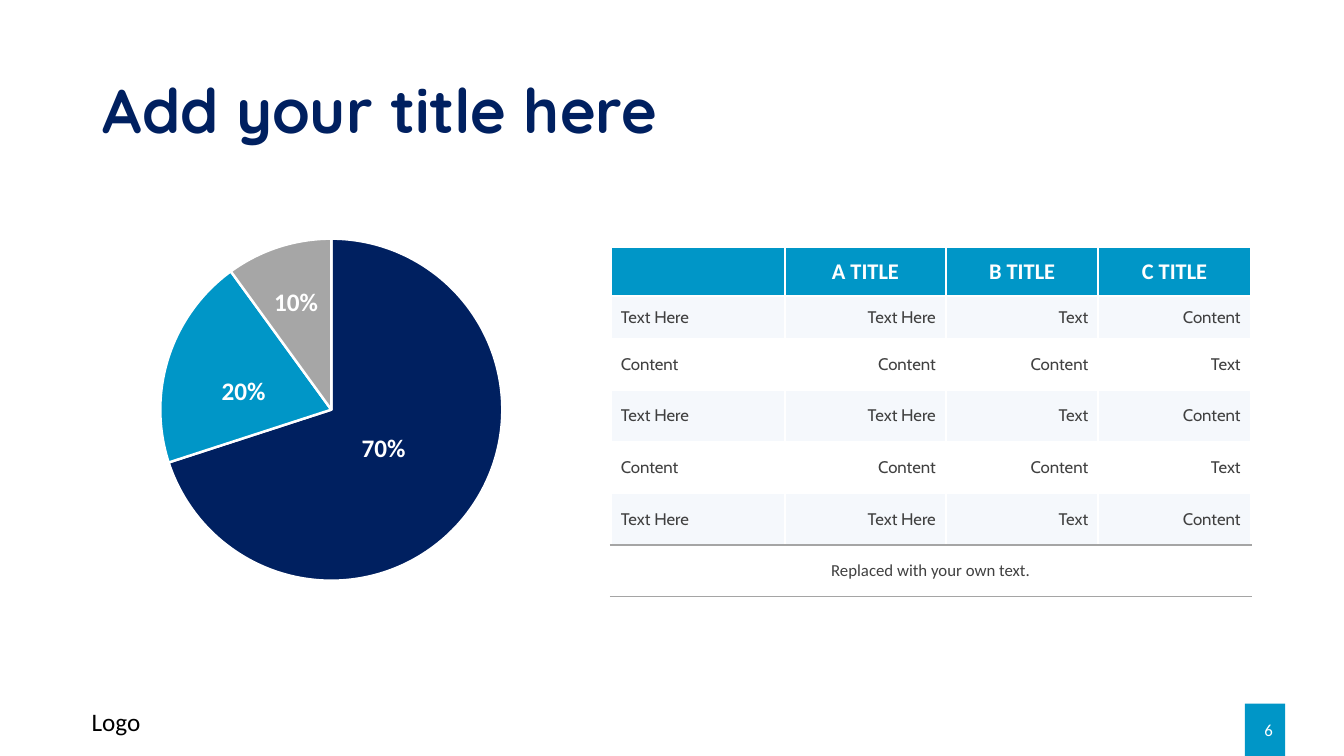
from dataclasses import dataclass

from lxml.etree import SubElement
from pptx import Presentation
from pptx.chart.data import CategoryChartData
from pptx.dml.color import RGBColor
from pptx.enum.chart import XL_CHART_TYPE as ChartType
from pptx.enum.shapes import MSO_SHAPE as Preset
from pptx.enum.text import MSO_ANCHOR as Anchor
from pptx.enum.text import MSO_AUTO_SIZE as AutoSize
from pptx.enum.text import PP_ALIGN as Align
from pptx.oxml import parse_xml
from pptx.oxml.ns import nsdecls, qn
from pptx.util import Cm, Pt


@dataclass(frozen=True)
class Theme:
    navy: str = "002060"
    blue: str = "0096C7"
    gray: str = "A6A6A6"
    rule: str = "A5A5A5"
    band: str = "9DC3E6"
    band_opacity: int = 10
    body: str = "404040"
    white: str = "FFFFFF"
    black: str = "000000"
    title_font: str = "Quicksand"
    body_font: str = "Cabin"
    plain_font: str = "Calibri"
    title_size: int = 44
    label_size: int = 18
    header_size: int = 16
    small_size: int = 12
    border_width: float = 1.5
    slice_line_width: float = 1.75


THEME = Theme()

HEADERS = ["", "A TITLE", "B TITLE", "C TITLE"]
TEXT_ROW = ["Text Here", "Text Here", "Text", "Content"]
CONTENT_ROW = ["Content", "Content", "Content", "Text"]
BODY_ROWS = [TEXT_ROW, CONTENT_ROW, TEXT_ROW, CONTENT_ROW, TEXT_ROW]
FOOTNOTE = "Replaced with your own text."
COLUMN_WIDTHS = [4.39, 4.06, 3.84, 3.84]
ROW_HEIGHTS = [1.24, 1.07] + [1.3] * 5

SLICES = [
    (70, THEME.navy, 8.69, 10.77),
    (20, THEME.blue, 5.16, 9.32),
    (10, THEME.gray, 6.48, 7.09),
]


def write_text(frame, text, *, size, color, font=THEME.plain_font, bold=False,
               align=Align.LEFT, line_spacing=None):
    paragraph = frame.paragraphs[0]
    paragraph.alignment = align
    paragraph.line_spacing = line_spacing
    run = paragraph.add_run()
    run.text = text
    run.font.name = font
    run.font.size = Pt(size)
    run.font.bold = bold
    run.font.color.rgb = RGBColor.from_string(color)


def add_text_box(slide, left, top, width, text, anchor=Anchor.MIDDLE, **text_format):
    box = slide.shapes.add_textbox(Cm(left), Cm(top), Cm(width), Cm(1.02))
    box.text_frame.word_wrap = True
    box.text_frame.vertical_anchor = anchor
    write_text(box.text_frame, text, **text_format)


def set_title(slide, text):
    title = slide.shapes.title
    title.left, title.top, title.width, title.height = Cm(2.34), Cm(1.02), Cm(29.21), Cm(3.68)
    title.text_frame.auto_size = AutoSize.NONE
    title.text_frame.vertical_anchor = Anchor.MIDDLE
    write_text(title.text_frame, text, size=THEME.title_size, color=THEME.navy,
               font=THEME.title_font, bold=True, line_spacing=0.9)


def add_page_number(slide, number):
    badge = slide.shapes.add_shape(Preset.RECTANGLE, Cm(31.37), Cm(17.73), Cm(1.02), Cm(1.32))
    badge.shadow.inherit = False
    badge.fill.solid()
    badge.fill.fore_color.rgb = RGBColor.from_string(THEME.blue)
    badge.line.fill.background()
    add_text_box(slide, 24.71, 17.88, 7.62, number, size=THEME.small_size,
                 color=THEME.white, align=Align.RIGHT)


def fill_cell(cell, color=None, opacity=100):
    if color is None:
        cell.fill.background()
        return
    cell.fill.solid()
    cell.fill.fore_color.rgb = RGBColor.from_string(color)
    if opacity < 100:
        color_element = next(cell._tc.tcPr.iter(qn("a:srgbClr")))
        SubElement(color_element, qn("a:alpha"), val=str(opacity * 1000))


def set_borders(cell, top, bottom):
    sides = {"L": THEME.white, "R": THEME.white, "T": top, "B": bottom}
    for position, (side, color) in enumerate(sides.items()):
        line = parse_xml(
            f'<a:ln{side} {nsdecls("a")} w="{Pt(THEME.border_width)}">'
            f'<a:solidFill><a:srgbClr val="{color}"/></a:solidFill></a:ln{side}>'
        )
        cell._tc.get_or_add_tcPr().insert(position, line)


def add_table(slide):
    rows = [HEADERS, *BODY_ROWS, [FOOTNOTE, "", "", ""]]
    last = len(rows) - 1
    table = slide.shapes.add_table(
        len(rows), len(HEADERS), Cm(15.39), Cm(6.22),
        Cm(sum(COLUMN_WIDTHS)), Cm(sum(ROW_HEIGHTS))).table
    table.first_row = table.horz_banding = False
    for column, width in zip(table.columns, COLUMN_WIDTHS):
        column.width = Cm(width)
    for row, height in zip(table.rows, ROW_HEIGHTS):
        row.height = Cm(height)
    table.cell(last, 0).merge(table.cell(last, len(HEADERS) - 1))

    header_format = dict(size=THEME.header_size, color=THEME.white, bold=True, align=Align.CENTER)
    footnote_format = dict(size=THEME.small_size, color=THEME.body, align=Align.CENTER)
    for row_index, texts in enumerate(rows):
        for column_index, text in enumerate(texts):
            cell = table.cell(row_index, column_index)
            cell.vertical_anchor = Anchor.MIDDLE
            if row_index == 0:
                fill_cell(cell, THEME.blue)
                text_format = header_format
            elif row_index == last:
                fill_cell(cell)
                text_format = footnote_format
            else:
                fill_cell(cell, THEME.band if row_index % 2 else None, THEME.band_opacity)
                text_format = dict(size=THEME.small_size, color=THEME.body, font=THEME.body_font,
                                   align=Align.RIGHT if column_index else Align.LEFT)
            set_borders(cell,
                        top=THEME.rule if row_index == last else THEME.white,
                        bottom=THEME.rule if row_index >= last - 1 else THEME.white)
            if text:
                write_text(cell.text_frame, text, **text_format)


def set_plot_area(chart, width, height):
    plot_area = chart._chartSpace.chart.plotArea
    for old_layout in plot_area.findall(qn("c:layout")):
        plot_area.remove(old_layout)
    layout = parse_xml(f'<c:layout {nsdecls("c")}><c:manualLayout/></c:layout>')
    plot_area.insert(0, layout)
    settings = {"layoutTarget": "inner", "xMode": "edge", "yMode": "edge",
                "x": (1 - width) / 2, "y": (1 - height) / 2, "w": width, "h": height}
    for name, value in settings.items():
        SubElement(layout[0], qn(f"c:{name}"), val=str(value))


def add_pie(slide):
    data = CategoryChartData()
    data.categories = [str(index + 1) for index in range(len(SLICES))]
    data.add_series("Series 1", [value for value, *_ in SLICES])
    chart = slide.shapes.add_chart(
        ChartType.PIE, Cm(3.45), Cm(5.64), Cm(9.8), Cm(9.37), data).chart
    chart.has_title = False
    chart.has_legend = False
    chart.font.name = THEME.plain_font
    chart.font.size = Pt(THEME.label_size)
    chart.font.color.rgb = RGBColor.from_string(THEME.black)
    plot = chart.plots[0]
    plot.vary_by_categories = False
    set_plot_area(chart, 0.88, 0.92)
    for index, (value, color, left, top) in enumerate(SLICES):
        slice_format = plot.series[0].points[index].format
        slice_format.fill.solid()
        slice_format.fill.fore_color.rgb = RGBColor.from_string(color)
        slice_format.line.color.rgb = RGBColor.from_string(THEME.white)
        slice_format.line.width = Pt(THEME.slice_line_width)
        add_text_box(slide, left, top, 1.96, f"{value}%", size=THEME.label_size,
                     color=THEME.white, bold=True, align=Align.CENTER)


def main():
    presentation = Presentation()
    presentation.slide_width, presentation.slide_height = Cm(33.87), Cm(19.05)
    slide = presentation.slides.add_slide(presentation.slide_layouts.get_by_name("Title Only"))
    set_title(slide, "Add your title here")
    add_page_number(slide, "6")
    add_table(slide)
    add_pie(slide)
    add_text_box(slide, 1.07, 17.68, 3.71, "Logo", anchor=Anchor.TOP,
                 size=THEME.label_size, color=THEME.black, align=Align.CENTER)
    presentation.save("out.pptx")


if __name__ == "__main__":
    main()
